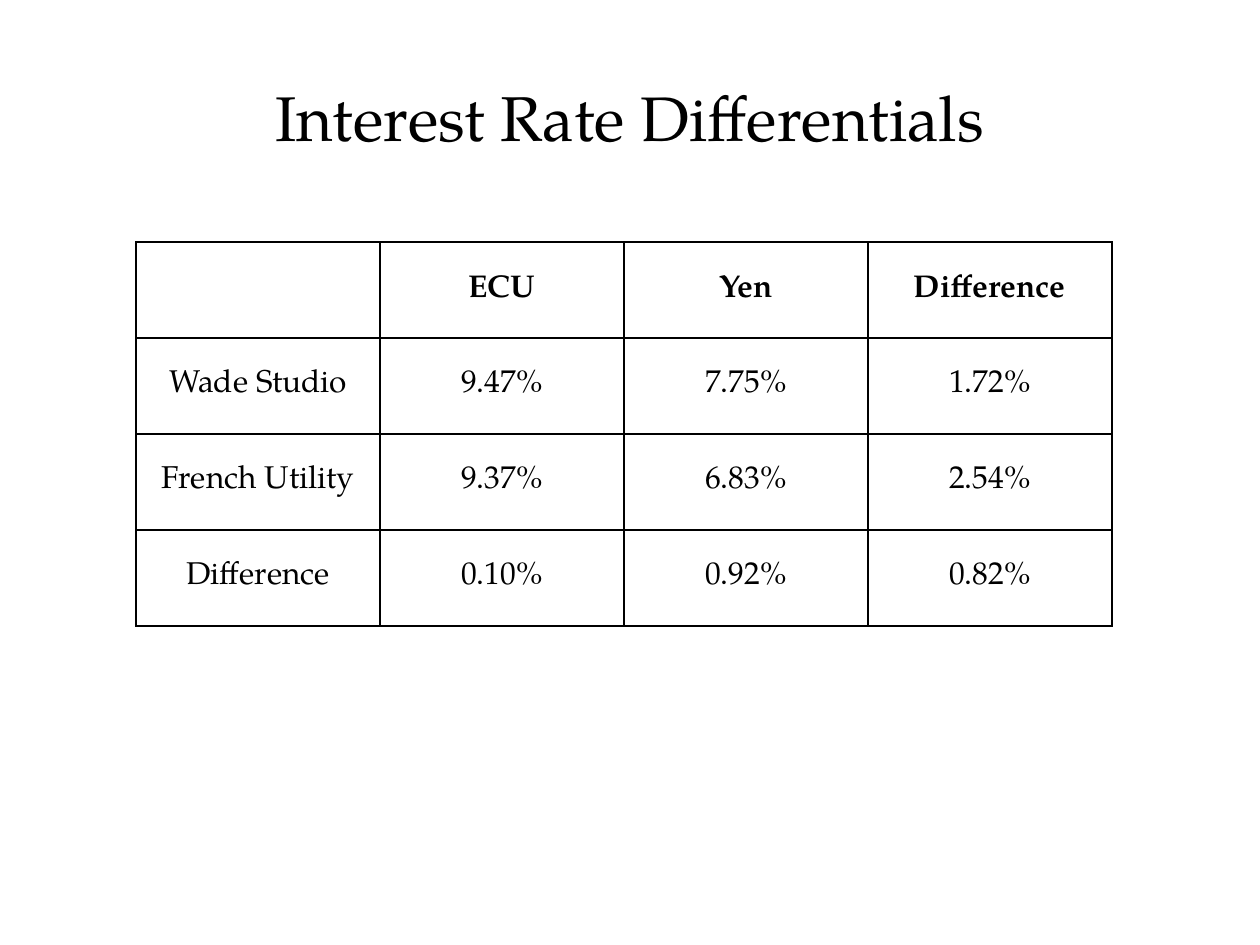
from dataclasses import dataclass

from lxml.etree import SubElement
from pptx import Presentation
from pptx.dml.color import RGBColor
from pptx.enum.text import MSO_ANCHOR, PP_ALIGN
from pptx.oxml.ns import qn
from pptx.util import Pt

PX = 914400 // 126  # EMU per px


@dataclass(frozen=True)
class Theme:
    font: str = "TeX Gyre Pagella"
    ink: str = "000000"
    paper: str = "FFFFFF"
    title: int = 36
    body: int = 18
    rule: int = 1


THEME = Theme()

RATES = [
    ["", "ECU", "Yen", "Difference"],
    ["Wade Studio", "9.47%", "7.75%", "1.72%"],
    ["French Utility", "9.37%", "6.83%", "2.54%"],
    ["Difference", "0.10%", "0.92%", "0.82%"],
]


def px(*sizes):
    return [size * PX for size in sizes]


def write(para, text, size, bold=False):
    para.text = text
    para.alignment = PP_ALIGN.CENTER
    font = para.font
    font.name, font.size, font.bold = THEME.font, Pt(size), bold
    font.color.rgb = RGBColor.from_string(THEME.ink)


def add_title(slide, text, *box):
    frame = slide.shapes.add_textbox(*px(*box)).text_frame
    frame.word_wrap = True
    frame.vertical_anchor = MSO_ANCHOR.MIDDLE
    write(frame.paragraphs[0], text, THEME.title)


def add_border(cell):
    props = cell._tc.get_or_add_tcPr()
    for side in ("lnL", "lnR", "lnT", "lnB"):
        line = SubElement(props, qn(f"a:{side}"), w=str(Pt(THEME.rule)))
        fill = SubElement(line, qn("a:solidFill"))
        SubElement(fill, qn("a:srgbClr"), val=THEME.ink)


def style_cell(cell, text, bold):
    # Borders must come before the fill in the cell's XML
    add_border(cell)
    cell.fill.solid()
    cell.fill.fore_color.rgb = RGBColor.from_string(THEME.paper)
    cell.vertical_anchor = MSO_ANCHOR.MIDDLE
    write(cell.text_frame.paragraphs[0], text, THEME.body, bold)


def add_grid(slide, rows, left, top, wide, high):
    box = px(left, top, wide * len(rows[0]), high * len(rows))
    table = slide.shapes.add_table(len(rows), len(rows[0]), *box).table
    for r, row in enumerate(rows):
        for c, text in enumerate(row):
            style_cell(table.cell(r, c), text, bold=r == 0)


def main():
    deck = Presentation()
    deck.slide_width, deck.slide_height = px(1260, 945)
    slide = deck.slides.add_slide(deck.slide_layouts[6])

    # Heading
    add_title(slide, "Interest Rate Differentials", 94, 53, 1071, 126)

    # Rates by borrower and currency
    add_grid(slide, RATES, left=136, top=242, wide=244, high=96)

    deck.save("out.pptx")


if __name__ == "__main__":
    main()
